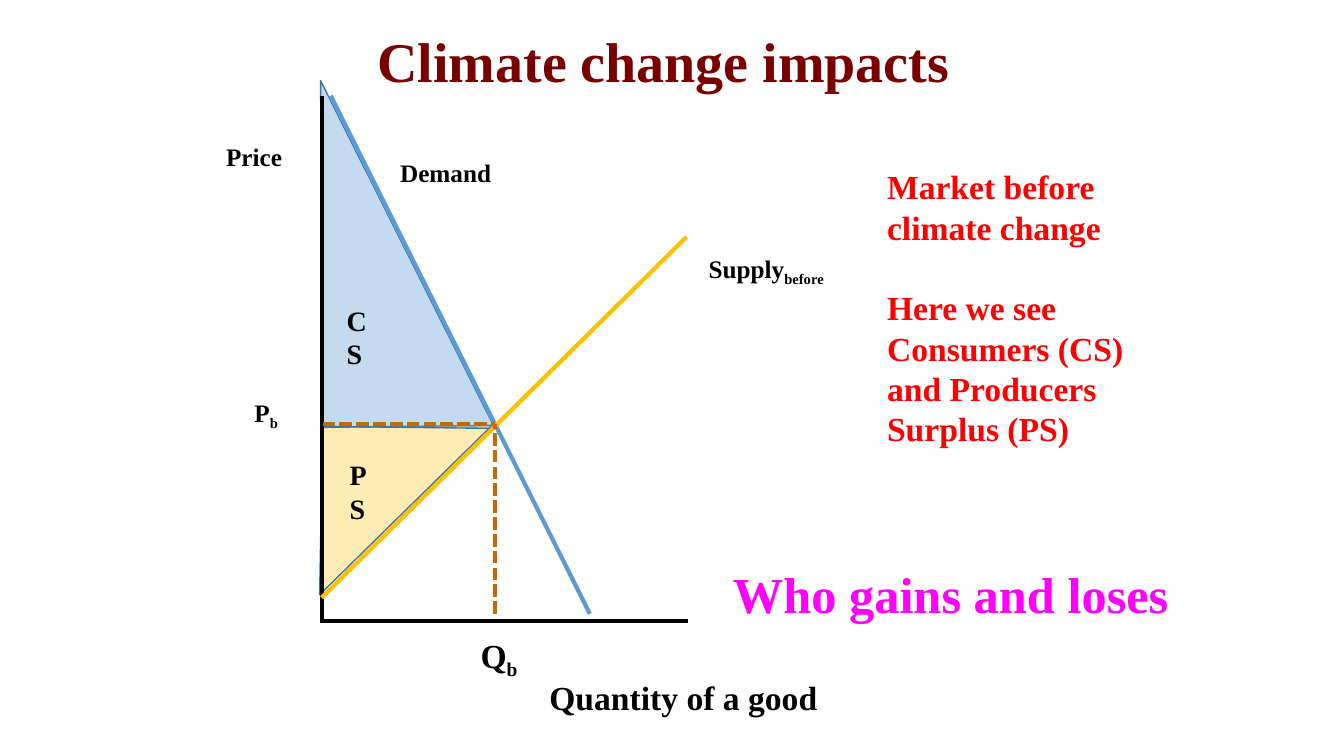
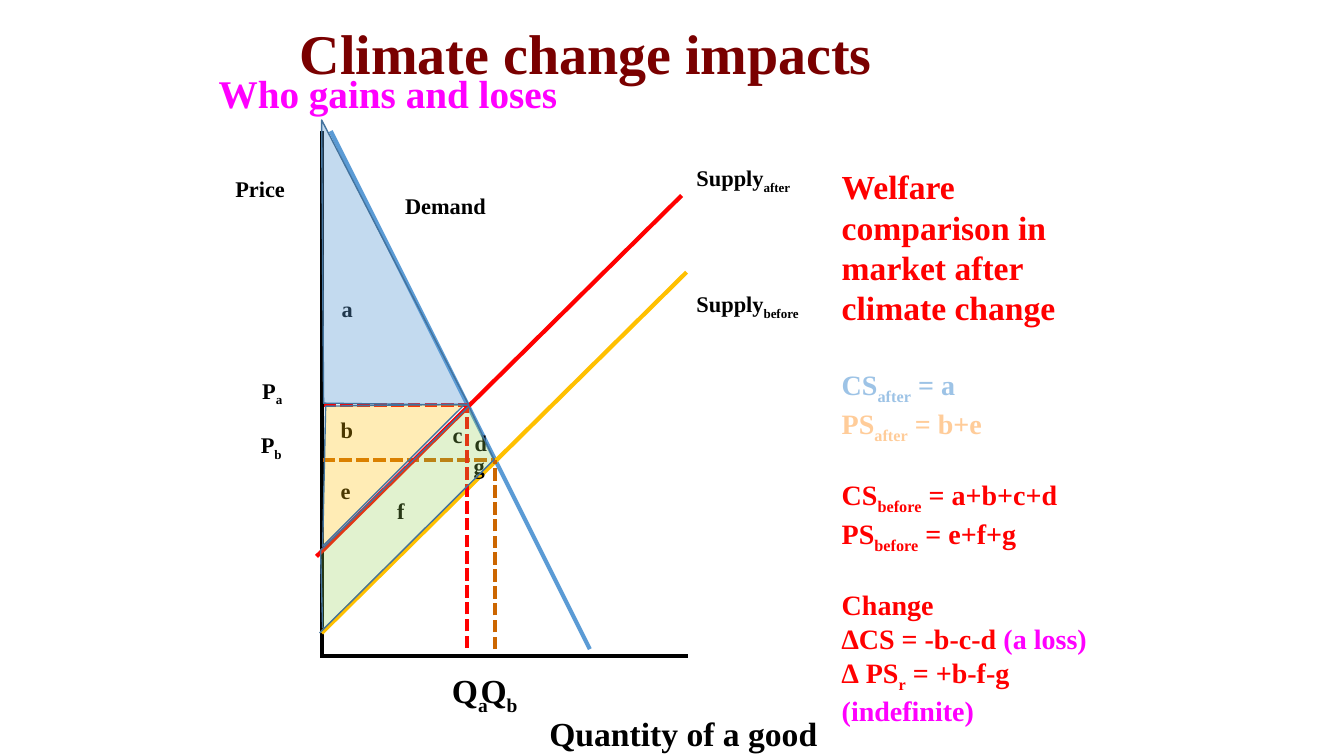
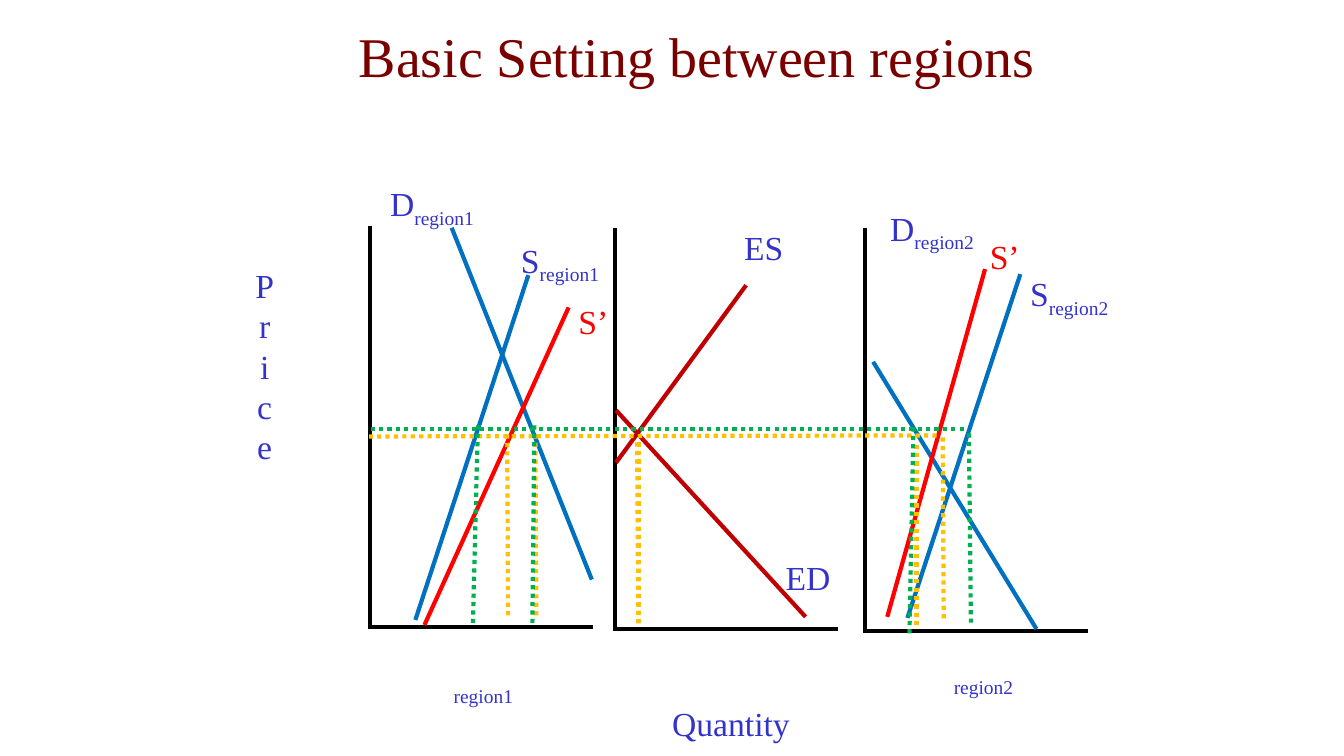
"""Build three slides on who gains and loses from climate change in a market."""
from dataclasses import dataclass

from lxml.etree import SubElement
from pptx import Presentation
from pptx.dml.color import RGBColor
from pptx.enum.dml import MSO_LINE
from pptx.enum.shapes import MSO_CONNECTOR
from pptx.enum.text import PP_ALIGN
from pptx.oxml.ns import qn
from pptx.slide import Slide
from pptx.util import Emu, Inches, Pt

CELL = Inches(0.1)
FONT = "Times New Roman"
COLORS = {
    "title": "7A0000", "ink": "000000", "alert": "FF0000", "accent": "FF00FF",
    "demand": "5B9BD5", "supply": "FFC000", "before": "CC6600", "outline": "43739E",
    "common": "92D050", "consumer": "9DC3E6", "producer": "FFCC99", "label": "3333CC",
    "curve": "0070C0", "excess": "C00000", "green": "00B050",
}
SOLID, DASH, DOT = None, MSO_LINE.SQUARE_DOT, MSO_LINE.ROUND_DOT


@dataclass(frozen=True)
class Para:
    """A paragraph: parts between bars are subscripts, the tail is in the accent colour."""
    text: str
    size: float = 24
    color: str = "ink"
    bold: bool = True
    tail: str = ""
    gap: float = 0


@dataclass(frozen=True)
class Label:
    """A text box placed on the grid."""
    col: float
    row: float
    cols: float
    rows: float
    paras: tuple[Para, ...]
    center: bool = False


@dataclass(frozen=True)
class Segment:
    """A straight line between two grid points."""
    col: float
    row: float
    end_col: float
    end_row: float
    color: str = "ink"
    dash: MSO_LINE | None = SOLID


@dataclass(frozen=True)
class Area:
    """A tinted surplus area, its opacity in percent."""
    points: tuple[tuple[float, float], ...]
    color: str
    opacity: int
    closed: bool = True


def cells(count: float) -> Emu:
    """Turn a number of grid cells into a length."""
    return Emu(round(count * CELL))


def rgb(name: str) -> RGBColor:
    """Look up a named colour."""
    return RGBColor.from_string(COLORS[name])


def draw_label(slide: Slide, label: Label) -> None:
    """Draw a text box with its paragraphs."""
    box = slide.shapes.add_textbox(*map(cells, (label.col, label.row, label.cols, label.rows)))
    frame = box.text_frame
    frame.word_wrap = True
    for index, para in enumerate(label.paras):
        paragraph = frame.add_paragraph() if index else frame.paragraphs[0]
        paragraph.alignment = PP_ALIGN.CENTER if label.center else PP_ALIGN.LEFT
        paragraph.space_before = Pt(para.gap)
        font = paragraph.font
        font.name, font.size, font.bold = FONT, Pt(para.size), para.bold
        if not para.tail:
            font.color.rgb = rgb(para.color)
        for place, part in enumerate(para.text.split("|")):
            if not part:
                continue
            run = paragraph.add_run()
            run.text = part
            if para.tail:
                run.font.color.rgb = rgb(para.color)
            if place % 2:
                run._r.get_or_add_rPr().set("baseline", "-25000")
        if para.tail:
            run = paragraph.add_run()
            run.text = para.tail
            run.font.color.rgb = rgb("accent")


def draw_segment(slide: Slide, segment: Segment) -> None:
    """Draw a line without a shadow."""
    ends = (segment.col, segment.row, segment.end_col, segment.end_row)
    line = slide.shapes.add_connector(MSO_CONNECTOR.STRAIGHT, *map(cells, ends))
    line.line.color.rgb = rgb(segment.color)
    line.line.width = Pt(3)
    if segment.dash is not None:
        line.line.dash_style = segment.dash
    SubElement(line._element.spPr, qn("a:effectLst"))


def draw_area(slide: Slide, area: Area) -> None:
    """Draw a see-through polygon."""
    start, *rest = [(cells(col), cells(row)) for col, row in area.points]
    builder = slide.shapes.build_freeform(*start)
    builder.add_line_segments(rest, close=area.closed)
    shape = builder.convert_to_shape()
    shape.shadow.inherit = False
    shape.fill.solid()
    shape.fill.fore_color.rgb = rgb(area.color)
    tint = shape._element.spPr.find(qn("a:solidFill"))[0]
    SubElement(tint, qn("a:alpha")).set("val", str(area.opacity * 1000))
    shape.line.color.rgb = rgb("outline")
    shape.line.width = Pt(1)


def draw(slide: Slide, *parts: Label | Segment | Area) -> None:
    """Draw parts from back to front."""
    painters = {Label: draw_label, Segment: draw_segment, Area: draw_area}
    for part in parts:
        painters[type(part)](slide, part)


def title(text: str, col: float, row: float, cols: float, bold: bool = True) -> Label:
    """Make a slide title."""
    return Label(col, row, cols, 7.7, (Para(text, 40, "title", bold),), True)


def tag(text: str, col: float, row: float, cols: float, size: float,
        center: bool = False, color: str = "ink", bold: bool = True) -> Label:
    """Make a one-line label."""
    return Label(col, row, cols, 5, (Para(text, size, color, bold),), center)


def market(drop: float) -> list[Label | Segment]:
    """List the axes, curves and first equilibrium, moved down by some rows."""
    lines = [
        (31.9, 9.5, 31.9, 61.8), (32, 61.6, 68.2, 61.6),
        (32.8, 9.5, 58.5, 60.9, "demand"), (31.9, 59.3, 68.1, 23.5, "supply"),
        (32, 42.1, 49.1, 42.1, "before", DASH), (49.1, 60.9, 49.1, 42.1, "before", DASH),
    ]
    return [
        *(Segment(col, row + drop, end_col, end_row + drop, *style)
          for col, row, end_col, end_row, *style in lines),
        tag("Quantity of a good", 53.5, 66.7 + drop, 36.4, 24),
        tag("Q|b", 44.8, 62.5 + drop, 9.4, 24, True),
    ]


def build_before(slide: Slide) -> None:
    """Show the market before climate change."""
    draw(
        slide,
        Area(((32, 42.4), (48.8, 42.2), (31.7, 59)), "supply", 29),
        Area(((32, 42.3), (49.1, 42.5), (31.8, 8)), "demand", 36),
        title("Climate change impacts", 36.1, 2.1, 59.4),
        *market(0),
        tag("Price", 20.5, 13.5, 9.4, 18, True),
        tag("Demand", 38.7, 15.1, 12.3, 18),
        tag("Supply|before", 69.3, 24.6, 15.4, 18),
        tag("P|b", 21.7, 38.9, 9.4, 18, True),
        tag("CS", 33.4, 29.6, 4.7, 20),
        tag("PS", 33.7, 44.9, 4.7, 20),
        Label(87, 16, 26.4, 29.3, (
            Para("Market before climate change", color="alert"),
            Para("Here we see Consumers (CS) and Producers Surplus (PS)", color="alert", gap=28.8),
        )),
        tag("Who gains and loses", 71.7, 55.4, 70.1, 36, color="accent"),
    )


def build_after(slide: Slide) -> None:
    """Compare welfare after climate change."""
    letters = {"a": (32.9, 28.8), "b": (32.8, 40.8), "c": (43.9, 41.3), "d": (46.1, 42.1),
               "e": (32.8, 46.8), "f": (38.4, 48.8), "g": (46, 44.4)}
    draw(
        slide,
        title("Climate change impacts", 28.4, 1.3, 59.4),
        *market(3.5),
        tag("Price", 21.1, 16.9, 9.4, 16, True),
        tag("Demand", 39.2, 18.6, 12.3, 16),
        tag("Supply|before", 68.1, 28.3, 14.3, 16),
        tag("Supply|after", 68.1, 15.8, 14.3, 16),
        tag("P|b", 22.2, 42.3, 9.4, 16, True),
        tag("P|a", 22.3, 36.9, 9.4, 16, True),
        tag("Q|a", 41.9, 66, 9.4, 24, True),
        Segment(31.4, 55.2, 67.6, 19.4, "alert"),
        Segment(32.1, 40.2, 46.6, 40.2, "alert", DASH),
        Segment(46.3, 64.3, 46.3, 40.6, "alert", DASH),
        *(tag(letter, *spot, 3.2, 16) for letter, spot in letters.items()),
        Label(82.5, 16, 30, 47.5, (
            Para("Welfare comparison in market after climate change", color="alert"),
            Para("CS|after| = a", 20, "consumer", gap=28.8),
            Para("PS|after| = b+e", 20, "producer"),
            Para("CS|before| = a+b+c+d", 20, "alert", gap=24),
            Para("PS|before| = e+f+g", 20, "alert"),
            Para("Change", 20, "alert", gap=24),
            Para("∆CS = -b-c-d ", 20, "alert", tail="(a loss)"),
            Para("∆ PS|r| = +b-f-g ", 20, "alert", tail="(indefinite)"),
        )),
        tag("Who gains and loses", 20.7, 6.4, 70.1, 28, color="accent"),
        Area(((32.1, 40), (46.5, 40.2), (31.9, 11.9)), "demand", 36),
        Area(((32.3, 40.3), (46.1, 40.1), (32, 54.2)), "supply", 29),
        Area(((31.7, 62.8), (49, 45.6), (46.5, 40.3), (31.8, 54.6), (32, 62.3)),
             "common", 27, False),
    )


def build_regions(slide: Slide) -> None:
    """Show trade between two regions."""
    panels = ((36.7, 22.4, 62.2), (61, 22.6, 62.4), (85.8, 22.6, 62.6))
    curves = {
        "curve": ((44.8, 22.6, 58.7, 57.5), (52.4, 27.3, 41.2, 61.5),
                  (101.2, 27.2, 90, 61.3), (86.6, 35.9, 102.8, 62.4)),
        "excess": ((61.1, 40.7, 79.9, 61.2), (74, 28.3, 61.1, 45.9)),
        "alert": ((56.4, 30.5, 42.1, 62), (97.7, 26.7, 88, 61.2)),
    }
    dotted = {
        "supply": ((63.2, 43.9, 63.3, 62), (92.9, 43.2, 36.6, 43.3), (63.4, 43.9, 63.4, 62),
                   (50.3, 43.1, 50.4, 61.2), (53.1, 43.1, 53.2, 61.2),
                   (90.9, 44.1, 90.9, 62.1), (93.5, 43.4, 93.6, 61.4)),
        "green": ((53, 42.2, 52.8, 62), (47.4, 42.2, 46.9, 62.1), (90.6, 42.4, 90.2, 62.9),
                  (96.1, 43, 96.3, 62.1), (95.6, 42.6, 36.4, 42.6)),
    }
    names = (("D|region1", 37, 17.7), ("S|region1", 49.7, 23.3), ("D|region2", 86.6, 20.1),
             ("S|region2", 100.2, 26.6), ("ES", 69.9, 22), ("ED", 74.3, 54.8),
             ("|region1", 42.1, 65.1), ("|region2", 91.7, 64.2))
    draw(
        slide,
        title("Basic Setting between regions", 23.2, 1.6, 91.8, False),
        *(Segment(col, top, col, base + 0.2) for col, top, base in panels),
        *(Segment(col, base, col + 22.1, base) for col, _, base in panels),
        *(Segment(*ends, color) for color, group in curves.items() for ends in group),
        Label(22.5, 25.8, 7.5, 25.2,
              tuple(Para(letter, color="label", bold=False) for letter in "Price"), True),
        tag("Quantity", 60.5, 69.2, 24, 24, True, "label", False),
        *(tag(name, col, row, 11.7, 24, True, "label", False) for name, col, row in names),
        *(tag("S’", col, row, 11.7, 24, True, "alert", False)
          for col, row in ((53, 29.4), (93.8, 22.9))),
        *(Segment(*ends, color, DOT) for color, group in dotted.items() for ends in group),
    )


def main() -> None:
    """Build and save the presentation."""
    deck = Presentation()
    deck.slide_width, deck.slide_height = cells(133.3), cells(75)
    for build in (build_before, build_after, build_regions):
        build(deck.slides.add_slide(deck.slide_layouts[6]))
    deck.save("out.pptx")


if __name__ == "__main__":
    main()
